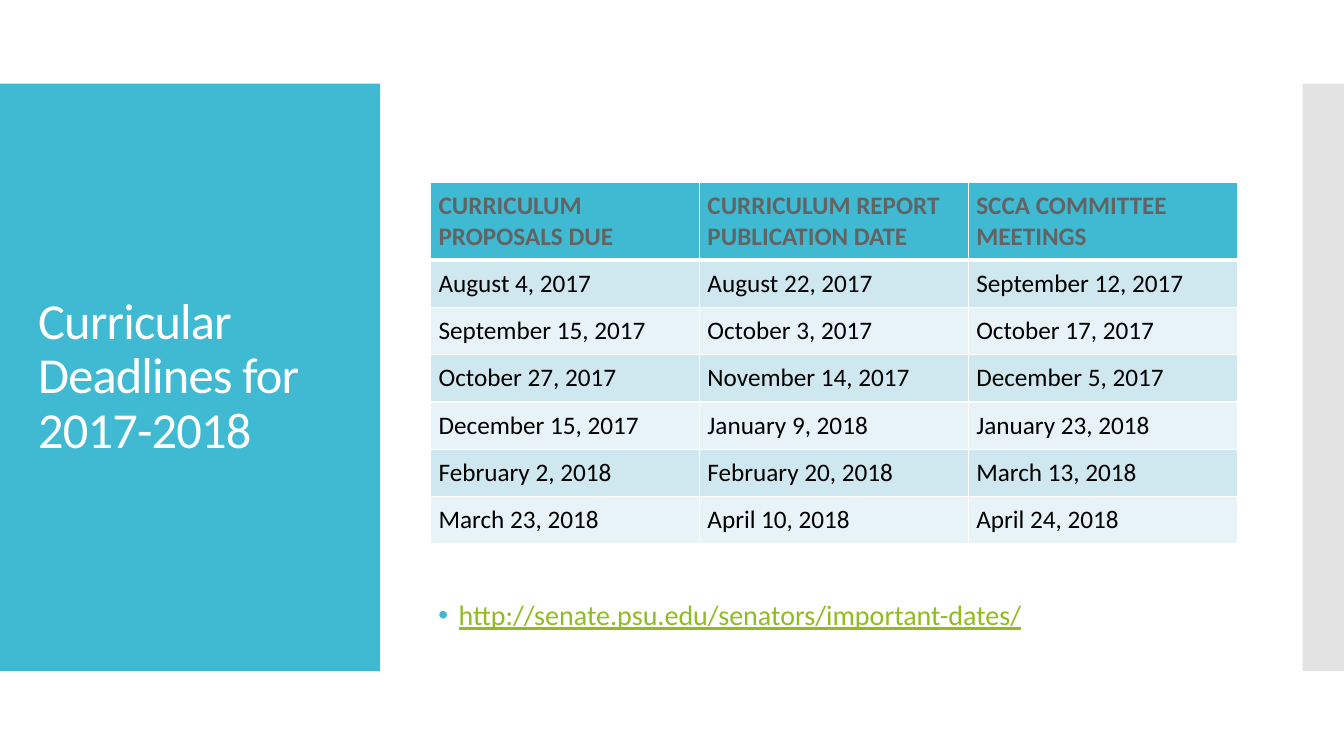
from lxml import etree
from pptx import Presentation
from pptx.dml.color import RGBColor
from pptx.enum.shapes import MSO_SHAPE
from pptx.enum.text import MSO_ANCHOR
from pptx.oxml.ns import qn
from pptx.util import Inches, Pt

RECT = MSO_SHAPE.RECTANGLE
MIDDLE = MSO_ANCHOR.MIDDLE
TOP = MSO_ANCHOR.TOP

TITLE = "Curricular Deadlines for 2017-2018"
LINK = "http://senate.psu.edu/senators/important-dates/"
DATES = [
    ("CURRICULUM PROPOSALS DUE", "CURRICULUM REPORT\vPUBLICATION DATE",
     "SCCA COMMITTEE MEETINGS"),
    ("August 4, 2017", "August 22, 2017", "September 12, 2017"),
    ("September 15, 2017", "October 3, 2017", "October 17, 2017"),
    ("October 27, 2017", "November 14, 2017", "December 5, 2017"),
    ("December 15, 2017", "January 9, 2018", "January 23, 2018"),
    ("February 2, 2018", "February 20, 2018", "March 13, 2018"),
    ("March 23, 2018", "April 10, 2018", "April 24, 2018"),
]
COLORS = {
    "teal": "40BAD2", "gray": "C8C8C8", "white": "FFFFFF", "head": "636363",
    "black": "000000", "odd": "CFE7EE", "even": "E8F3F7", "link": "90BB23",
}
FONT = "Calibri"
HEAD_H, ROW_H = 0.77, 0.47


def rgb(name):
    return RGBColor.from_string(COLORS[name])


def add_panel(slide, left, width, color):
    panel = slide.shapes.add_shape(
        RECT, Inches(left), Inches(0.83), Inches(width), Inches(5.83))
    panel.shadow.inherit = False
    panel.fill.solid()
    panel.fill.fore_color.rgb = rgb(color)
    panel.line.fill.background()
    return panel


def style(para, size, color, bold=False):
    para.font.name = FONT
    para.font.size = Pt(size)
    para.font.bold = bold
    para.font.color.rgb = rgb(color)


def add_text(slide, text, box, size, color):
    """Add a middle-anchored text box and return its paragraph."""
    frame = slide.shapes.add_textbox(*map(Inches, box)).text_frame
    frame.word_wrap = True
    frame.vertical_anchor = MIDDLE
    para = frame.paragraphs[0]
    para.text = text
    para.line_spacing = 0.9
    style(para, size, color)
    return para


def add_edge(cell, side, width):
    edge = etree.SubElement(cell._tc.get_or_add_tcPr(), qn("a:ln" + side),
                            w=str(Pt(width)))
    fill = etree.SubElement(edge, qn("a:solidFill"))
    etree.SubElement(fill, qn("a:srgbClr"), val=COLORS["white"])


def fill_cell(cell, text, row):
    head = row == 0
    for side in "LRTB":
        thick = (row, side) in ((0, "B"), (1, "T"))
        add_edge(cell, side, 3 if thick else 1)
    cell.fill.solid()
    cell.fill.fore_color.rgb = rgb(
        "teal" if head else "odd" if row % 2 else "even")
    cell.margin_left = cell.margin_right = Inches(0.08)
    cell.margin_top = cell.margin_bottom = Inches(0.08)
    cell.vertical_anchor = MIDDLE if head else TOP
    cell.text = text
    style(cell.text_frame.paragraphs[0], 18, "head" if head else "black", head)


def add_dates(slide):
    height = HEAD_H + ROW_H * (len(DATES) - 1)
    table = slide.shapes.add_table(
        len(DATES), len(DATES[0]), Inches(4.27), Inches(1.81),
        Inches(8), Inches(height)).table
    for row, texts in enumerate(DATES):
        table.rows[row].height = Inches(ROW_H if row else HEAD_H)
        for col, text in enumerate(texts):
            fill_cell(table.cell(row, col), text, row)


def add_bullet(para):
    props = para._p.get_or_add_pPr()
    props.set("marL", str(Inches(0.2)))
    props.set("indent", str(-Inches(0.2)))
    color = etree.SubElement(props, qn("a:buClr"))
    etree.SubElement(color, qn("a:srgbClr"), val=COLORS["teal"])
    etree.SubElement(props, qn("a:buFont"), typeface="Arial")
    etree.SubElement(props, qn("a:buChar"), char="•")
    # The schema wants the default run properties last.
    props.append(props.find(qn("a:defRPr")))


def main():
    deck = Presentation()
    deck.slide_width, deck.slide_height = Inches(13.33), Inches(7.5)
    slide = deck.slides.add_slide(deck.slide_layouts[6])

    add_panel(slide, 0, 3.77, "teal")
    strip = add_panel(slide, 12.92, 0.41, "gray")
    tint = strip.fill._xPr.find(".//" + qn("a:srgbClr"))
    etree.SubElement(tint, qn("a:alpha"), val="50000")

    title = add_text(slide, TITLE, (0.28, 1.23, 3.22, 5.03), 36, "white")
    title.runs[0]._r.get_or_add_rPr().set("spc", "-60")

    add_dates(slide)

    link = add_text(slide, LINK, (4.25, 5.83, 8, 0.57), 20, "link")
    link.font.underline = True
    add_bullet(link)
    deck.save("out.pptx")


if __name__ == "__main__":
    main()
